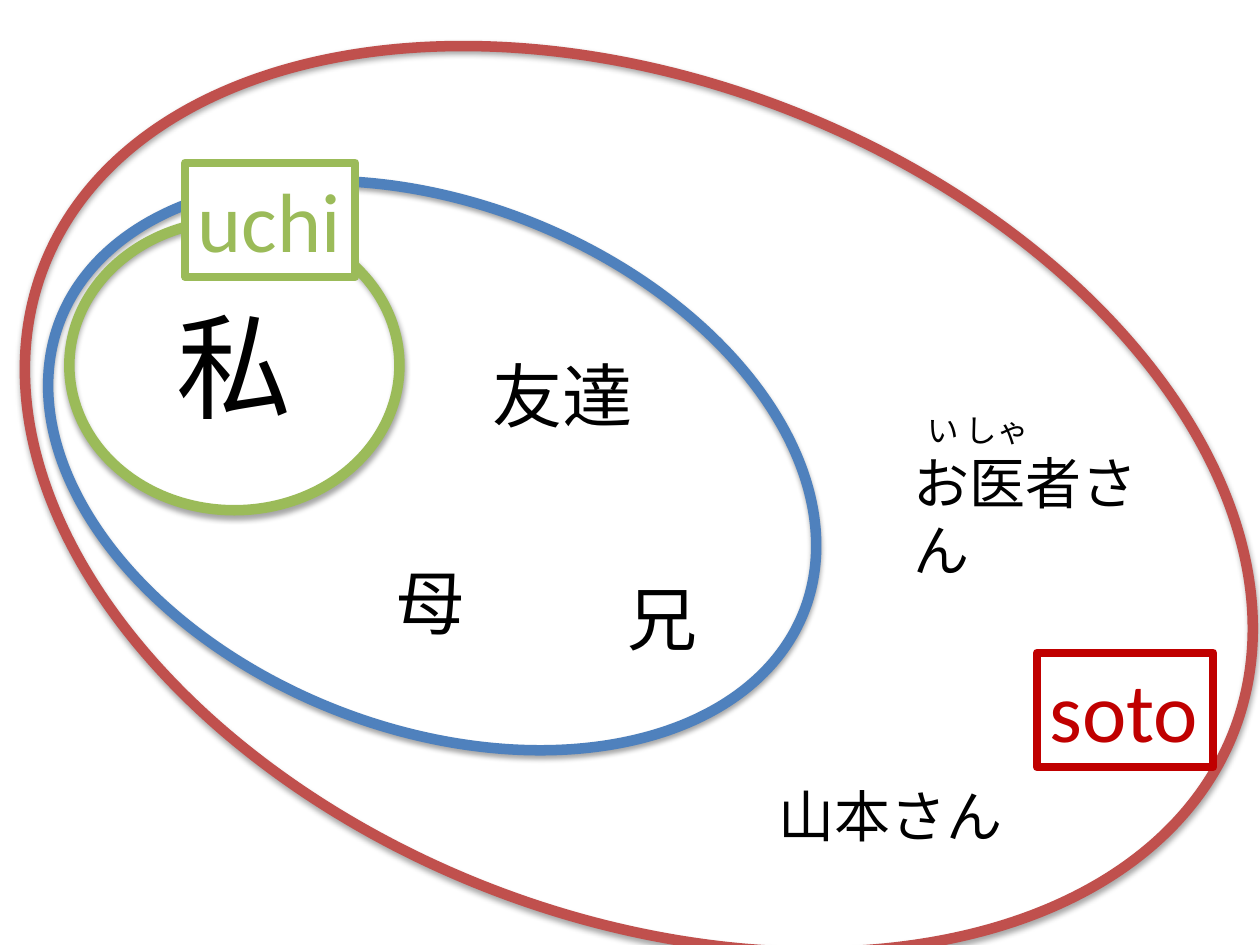
import pptx
import pptx.dml.color
import pptx.enum.shapes
import pptx.enum.text
import pptx.oxml
import pptx.oxml.ns
import pptx.util

WIDTH, HEIGHT = pptx.util.Inches(10), pptx.util.Inches(7.5)
COLUMNS, ROWS = 100, 75
BLACK, WHITE = "000000", "FFFFFF"
BLUE, GREEN, RED, DARK_RED = "4F81BD", "9BBB59", "C0504D", "C00000"
FONT = "Calibri"

# Boxes are (column, row, columns, rows).
CIRCLES = [
    ((2.6, 16.1, 63.4, 41.7), BLUE, 21.4),
    ((5.5, 17.5, 26.2, 23), GREEN, 0),
    ((0, 6.5, 101.4, 66.2), RED, 21.4),
]
PEOPLE = [
    ("私", (13, 22.9, 11.3, 12.1), 66),
    ("兄", (48.8, 45.2, 7.6, 7.7), 40),
    ("母", (30.4, 43.9, 7.6, 7.7), 40),
    ("友達", (38.1, 27.5, 13.2, 7.7), 40),
    ("山本さん", (60.8, 61.5, 20, 6.4), 32),
]
LABELS = [
    ("uchi", (14.7, 12.9, 13.5, 9.1), GREEN),
    ("soto", (82.3, 51.8, 14, 9.1), DARK_RED),
]


def rgb(value):
    return pptx.dml.color.RGBColor.from_string(value)


def on_grid(box):
    left, top, width, height = box
    return (int(left * WIDTH / COLUMNS), int(top * HEIGHT / ROWS),
            int(width * WIDTH / COLUMNS), int(height * HEIGHT / ROWS))


def add_shadow(shape):
    """Soft black shadow straight below the shape."""
    blur, distance = pptx.util.Pt(3.1), pptx.util.Pt(1.8)
    shape._element.spPr.append(pptx.oxml.parse_xml(
        f'<a:effectLst {pptx.oxml.ns.nsdecls("a")}>'
        f'<a:outerShdw blurRad="{blur}" dist="{distance}" dir="5400000" rotWithShape="0">'
        '<a:srgbClr val="000000"><a:alpha val="35000"/></a:srgbClr>'
        '</a:outerShdw></a:effectLst>'))


def add_circle(shapes, box, color, rotation):
    circle = shapes.add_shape(pptx.enum.shapes.MSO_SHAPE.OVAL, *on_grid(box))
    circle.rotation = rotation
    circle.fill.background()
    circle.line.color.rgb = rgb(color)
    circle.line.width = pptx.util.Pt(6)
    add_shadow(circle)


def add_text(shapes, box, lines, color=BLACK, wrap=False):
    """Place (text, size) lines, one paragraph each."""
    text_box = shapes.add_textbox(*on_grid(box))
    frame = text_box.text_frame
    frame.word_wrap = wrap
    frame.auto_size = pptx.enum.text.MSO_AUTO_SIZE.SHAPE_TO_FIT_TEXT
    frame.text = "\n".join(text for text, size in lines)
    for para, (text, size) in zip(frame.paragraphs, lines):
        para.font.name = FONT
        para.font.size = pptx.util.Pt(size)
        para.font.color.rgb = rgb(color)
    return text_box


def add_doctor(shapes, box):
    """Word with its reading set above the two kanji."""
    doctor = add_text(shapes, box, [("い しゃ", 18), ("お医者さん", 32)], wrap=True)
    reading = doctor.text_frame.paragraphs[0]
    reading._p.get_or_add_pPr().set("marL", str(pptx.util.Inches(0.11)))


def add_label(shapes, text, box, color):
    label = add_text(shapes, box, [(text, 48)], color)
    label.fill.solid()
    label.fill.fore_color.rgb = rgb(WHITE)
    label.line.color.rgb = rgb(color)
    label.line.width = pptx.util.Pt(4.5)


def add_diagram(page):
    group = page.shapes.add_group_shape()
    for circle in CIRCLES:
        add_circle(group.shapes, *circle)
    for name, box, size in PEOPLE:
        add_text(group.shapes, box, [(name, size)])
    add_doctor(group.shapes, (71.5, 32.1, 24, 9.4))
    for label in LABELS:
        add_label(page.shapes, *label)


def main():
    deck = pptx.Presentation()
    deck.slide_width, deck.slide_height = WIDTH, HEIGHT
    add_diagram(deck.slides.add_slide(deck.slide_layouts[6]))
    deck.save("out.pptx")


if __name__ == "__main__":
    main()
